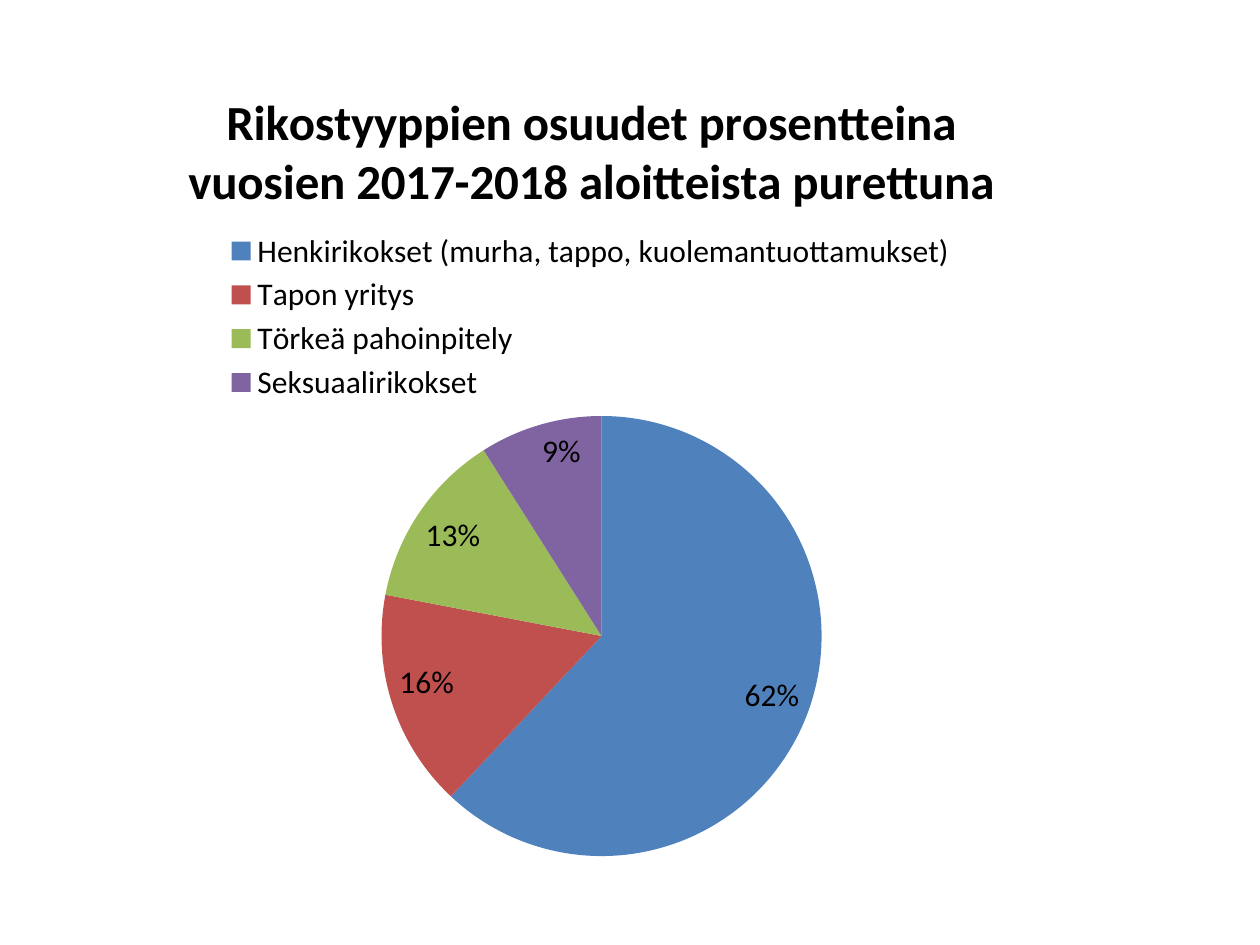
from dataclasses import dataclass

from lxml.etree import SubElement as Sub
from pptx import Presentation
from pptx.chart.data import CategoryChartData as Data
from pptx.dml.color import RGBColor as Rgb
from pptx.enum.chart import XL_CHART_TYPE as Kind
from pptx.enum.chart import XL_LABEL_POSITION as Spot
from pptx.enum.chart import XL_LEGEND_POSITION as Side
from pptx.oxml.ns import qn
from pptx.util import Emu, Pt


@dataclass(frozen=True)
class Theme:
    """Hold the colours, font and type sizes."""
    font: str = "Calibri"
    ink: str = "000000"
    body: int = 18
    head: int = 28
    fills: tuple = ("4F81BD", "C0504D", "9BBB59", "8064A2")


THEME = Theme()
TITLE = "Rikostyyppien osuudet prosentteina vuosien 2017-2018 aloitteista purettuna"
SHARES = {
    "Henkirikokset (murha, tappo, kuolemantuottamukset)": 62,
    "Tapon yritys": 16,
    "Törkeä pahoinpitely": 13,
    "Seksuaalirikokset": 9,
}


def px(num):
    """Turn pixels into EMU."""
    return Emu(round(num * 914400 / 126))


def style(font, size, bold=False):
    """Set the face, size, weight and colour of a font."""
    font.name = THEME.font
    font.size = Pt(size)
    font.bold = bold
    font.color.rgb = Rgb.from_string(THEME.ink)


def place(node, index, inner=False, **box):
    """Give a chart part a manual layout in fractions of the chart."""
    for old in node.findall(qn("c:layout")):
        node.remove(old)
    lay = Sub(node, qn("c:layout"))
    node.insert(index, lay)
    man = Sub(lay, qn("c:manualLayout"))
    if inner:
        Sub(man, qn("c:layoutTarget")).set("val", "inner")
    for key in ("x", "y"):
        Sub(man, qn(f"c:{key}Mode")).set("val", "edge")
    for key, val in box.items():
        Sub(man, qn(f"c:{key}")).set("val", str(val))


def add_title(chart):
    """Write the chart title."""
    chart.has_title = True
    para = chart.chart_title.text_frame.paragraphs[0]
    run = para.add_run()
    run.text = TITLE
    style(run.font, THEME.head, True)
    place(chart.element.find(".//" + qn("c:title")), 1, x=0.13, y=0.04)


def add_key(chart):
    """Set the legend between the title and the pie."""
    chart.has_legend = True
    key = chart.legend
    key.position = Side.TOP
    key.include_in_layout = False
    style(key.font, THEME.body)
    place(chart.element.find(".//" + qn("c:legend")), 1,
          x=0.17, y=0.21, w=0.66, h=0.21)


def add_pie(slide, left, top, width, height):
    """Draw the pie with its slices and percent labels."""
    data = Data()
    data.categories = list(SHARES)
    data.add_series("Series 1", list(SHARES.values()))
    frame = slide.shapes.add_chart(
        Kind.PIE, px(left), px(top), px(width), px(height), data)
    chart = frame.chart
    style(chart.font, THEME.body)
    plot = chart.plots[0]
    plot.vary_by_categories = True
    for num, tint in enumerate(THEME.fills):
        fill = plot.series[0].points[num].format.fill
        fill.solid()
        fill.fore_color.rgb = Rgb.from_string(tint)
    tags = plot.series[0].data_labels
    tags.show_value = False
    tags.show_percentage = True
    tags.number_format = "0%"
    tags.number_format_is_linked = False
    tags.position = Spot.INSIDE_END
    style(tags.font, THEME.body)
    place(chart.element.find(".//" + qn("c:plotArea")), 0, True,
          x=0.31, y=0.43, w=0.4, h=0.51)
    return chart


def main():
    """Build and save the slide."""
    deck = Presentation()
    deck.slide_width, deck.slide_height = px(1260), px(945)
    slide = deck.slides.add_slide(deck.slide_layouts[6])
    chart = add_pie(slide, 35, 45, 1111, 863)
    add_title(chart)
    add_key(chart)
    deck.save("out.pptx")


if __name__ == "__main__":
    main()
